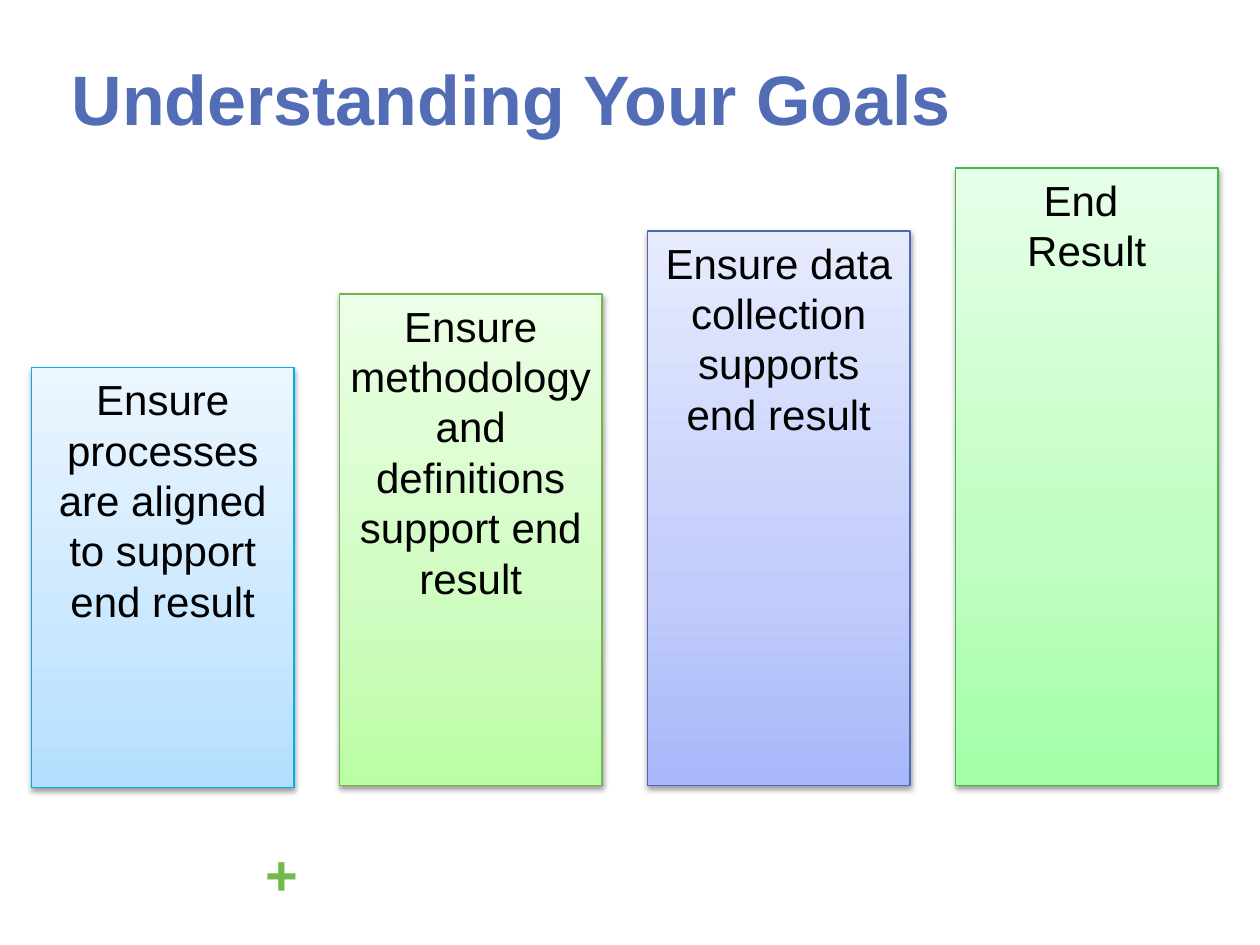
from copy import deepcopy

from lxml import etree
from pptx import Presentation
from pptx.dml.color import RGBColor
from pptx.enum import shapes, text
from pptx.oxml import ns
from pptx.util import Pt

FONT = "Arial"
COLORS = {"title": "526DB6", "plus": "73B84D", "label": "000000", "shadow": "000000"}

# Bars are evenly spaced and rise from left to right
BAR_LEFT, BAR_PITCH, BAR_WIDTH = 18, 176, 150
STOP_POSITIONS = (0, 0.35, 1)

# top, height, side inset, label paragraphs, gradient from bottom to top, outline
STEPS = [
    (210, 240, 7.2, ["Ensure processes are aligned to support end result"],
     ("B3DEFF", "C9E7FF", "EBF6FF"), "00AFE7"),
    (168, 280.8, 0, ["Ensure methodology and definitions support end result"],
     ("BBFDA4", "CFFCC0", "ECFFE6"), "70B749"),
    (132, 316.8, 7.2, ["Ensure data collection supports end result"],
     ("A7B7FA", "C1CCFA", "E6EBFE"), "4E69B4"),
    (96, 352.8, 7.2, ["End ", "Result"],
     ("A2FFA6", "BEFEC0", "E6FFE7"), "41BA4A"),
]


def style_font(paragraph, size, color, bold=False):
    font = paragraph.font
    font.name, font.size, font.bold = FONT, Pt(size), bold
    font.color.rgb = RGBColor.from_string(color)


def fill_gradient(bar, colors):
    bar.fill.gradient()
    bar.fill.gradient_angle = 90
    first_stop = bar.fill._fill._gradFill.gsLst[0]
    first_stop.addnext(deepcopy(first_stop))
    for stop, position, color in zip(bar.fill.gradient_stops, STOP_POSITIONS, colors):
        stop.position = position
        stop.color.rgb = RGBColor.from_string(color)


def add_soft_shadow(bar):
    bar.shadow.inherit = False
    effects = bar._element.spPr.find(ns.qn("a:effectLst"))
    shadow = etree.SubElement(effects, ns.qn("a:outerShdw"), blurRad=str(Pt(3.15)),
                              dist=str(Pt(1.57)), dir="5400000", rotWithShape="0")
    color = etree.SubElement(shadow, ns.qn("a:srgbClr"), val=COLORS["shadow"])
    etree.SubElement(color, ns.qn("a:alpha"), val="38000")


def add_step(slide, index, top, height, inset, lines, gradient, outline):
    bar = slide.shapes.add_shape(
        shapes.MSO_SHAPE.RECTANGLE, Pt(BAR_LEFT + index * BAR_PITCH), Pt(top),
        Pt(BAR_WIDTH), Pt(height))
    fill_gradient(bar, gradient)
    bar.line.color.rgb = RGBColor.from_string(outline)
    bar.line.width = Pt(0.75)
    add_soft_shadow(bar)

    label = bar.text_frame
    label.word_wrap = True
    label.vertical_anchor = text.MSO_ANCHOR.TOP
    label.margin_left = label.margin_right = Pt(inset)
    label.text = "\n".join(lines)
    for paragraph in label.paragraphs:
        paragraph.alignment = text.PP_ALIGN.CENTER
        style_font(paragraph, 24, COLORS["label"])


def set_title(slide, wording):
    title = slide.shapes.title
    title.left, title.top, title.width, title.height = Pt(36), Pt(24), Pt(648), Pt(54)
    frame = title.text_frame
    frame.text = wording
    frame.vertical_anchor = text.MSO_ANCHOR.TOP
    frame.margin_left, frame.margin_top = Pt(5), Pt(7.5)
    frame.paragraphs[0].alignment = text.PP_ALIGN.LEFT
    style_font(frame.paragraphs[0], 40, COLORS["title"], bold=True)


def add_plus(slide):
    plus = slide.shapes.add_textbox(Pt(144.8), Pt(476), Pt(33), Pt(46)).text_frame
    plus.word_wrap = False
    plus.text = "+"
    style_font(plus.paragraphs[0], 32, COLORS["plus"], bold=True)


def main():
    deck = Presentation()
    deck.slide_width, deck.slide_height = Pt(720), Pt(540)
    slide = deck.slides.add_slide(deck.slide_layouts[5])

    # Heading and corner mark
    add_plus(slide)
    set_title(slide, "Understanding Your Goals")

    # Rising steps towards the end result
    for index, step in enumerate(STEPS):
        add_step(slide, index, *step)

    deck.save("out.pptx")


if __name__ == "__main__":
    main()
